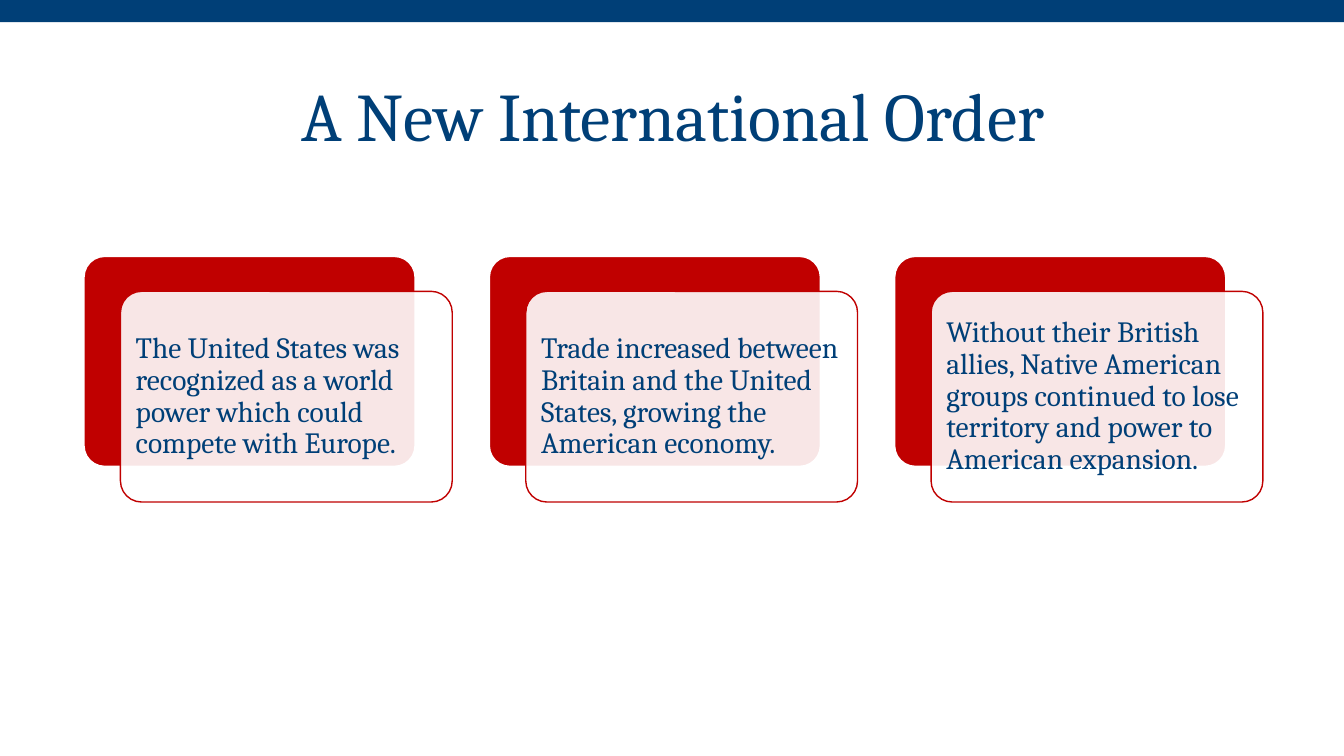
from lxml.etree import SubElement
from pptx import Presentation
from pptx.dml.color import RGBColor
from pptx.enum.shapes import MSO_SHAPE as Shape
from pptx.enum.text import MSO_ANCHOR as Anchor, PP_ALIGN as Align
from pptx.oxml.ns import qn
from pptx.util import Inches, Pt

COLORS = {"navy": "003F77", "red": "C00000", "white": "FFFFFF"}
FONT = "Cambria"
GRID_LEFT, GRID_TOP, COLUMN_STEP = 0.83, 2.54, 4.02
CARD_WIDTH, CARD_HEIGHT = 3.29, 2.09
FRONT_SHIFT_X, FRONT_SHIFT_Y = 0.365, 0.35
OUTCOMES = (
    "The United States was recognized as a world power which could compete with Europe.",
    "Trade increased between Britain and the United States, growing the American economy.",
    "Without their British allies, Native American groups continued to lose territory "
    "and power to American expansion.",
)


def color(name):
    """Return the named palette colour."""
    return RGBColor.from_string(COLORS[name])


def add_panel(slide, kind, box, fill, line=None, line_width=1):
    """Add a filled preset shape with an optional outline."""
    panel = slide.shapes.add_shape(kind, *map(Inches, box))
    panel.shadow.inherit = False
    panel.fill.solid()
    panel.fill.fore_color.rgb = color(fill)
    if line:
        panel.line.color.rgb = color(line)
        panel.line.width = Pt(line_width)
    else:
        panel.line.fill.background()
    return panel


def write(frame, wording, size, align, inset):
    """Write one navy paragraph centred vertically in a text frame."""
    frame.word_wrap = True
    frame.vertical_anchor = Anchor.MIDDLE
    frame.margin_left = frame.margin_right = Inches(inset)
    frame.margin_top = frame.margin_bottom = Inches(inset)
    paragraph = frame.paragraphs[0]
    paragraph.alignment = align
    paragraph.line_spacing = 0.9
    run = paragraph.add_run()
    run.text = wording
    run.font.name = FONT
    run.font.size = Pt(size)
    run.font.color.rgb = color("navy")


def add_title(slide, wording):
    """Add the centred slide title."""
    title = slide.shapes.add_textbox(*map(Inches, (0.92, 0.82, 11.5, 0.74)))
    write(title.text_frame, wording, 48.6, Align.CENTER, 0.05)


def add_outcome(slide, column, wording):
    """Add a red back card and a translucent front card holding the wording."""
    left = GRID_LEFT + column * COLUMN_STEP
    back = add_panel(slide, Shape.ROUNDED_RECTANGLE,
                     (left, GRID_TOP, CARD_WIDTH, CARD_HEIGHT), "red", "white", 1.5)
    front = add_panel(slide, Shape.ROUNDED_RECTANGLE,
                      (left + FRONT_SHIFT_X, GRID_TOP + FRONT_SHIFT_Y,
                       CARD_WIDTH, CARD_HEIGHT), "white", "red")
    for card in (back, front):
        card.adjustments[0] = 0.1
    white = front.fill._xPr.find(qn("a:solidFill")).find(qn("a:srgbClr"))
    SubElement(white, qn("a:alpha")).set("val", "90000")
    write(front.text_frame, wording, 21, Align.LEFT, 0.09)


def main():
    """Build and save the slide."""
    deck = Presentation()
    deck.slide_width, deck.slide_height = Inches(13.33), Inches(7.5)
    slide = deck.slides.add_slide(deck.slide_layouts[6])
    add_panel(slide, Shape.RECTANGLE, (0, 0, 13.33, 0.22), "navy")
    add_title(slide, "A New International Order")
    for column, wording in enumerate(OUTCOMES):
        add_outcome(slide, column, wording)
    deck.save("out.pptx")


if __name__ == "__main__":
    main()
